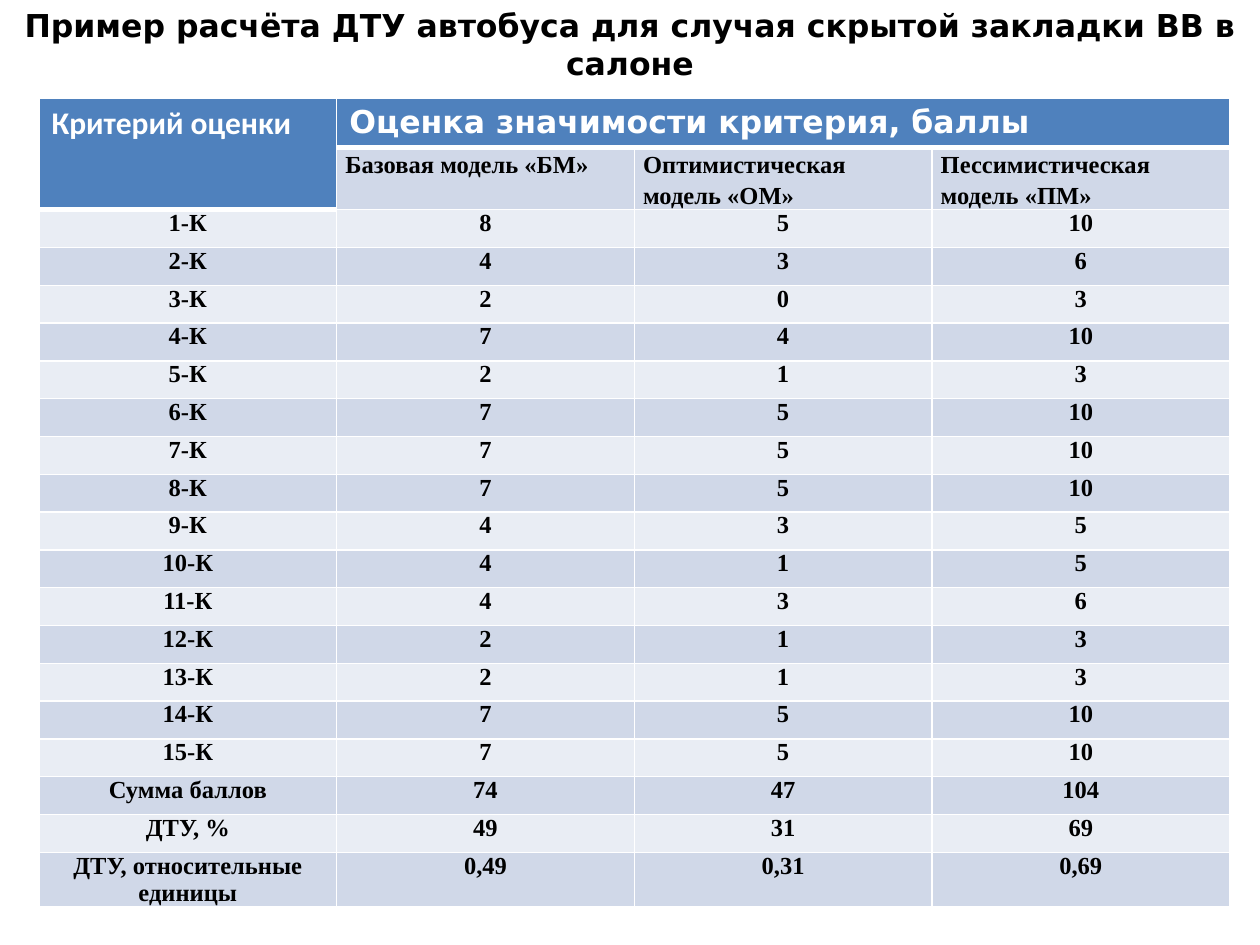
import dataclasses
import typing

import lxml.etree
import pptx
import pptx.dml.color
import pptx.enum.text
import pptx.oxml.ns
import pptx.util

RGB = pptx.dml.color.RGBColor
ALIGN = pptx.enum.text.PP_ALIGN
WHITE = RGB(0xFF, 0xFF, 0xFF)
BLACK = RGB(0x00, 0x00, 0x00)
BLUE = RGB(0x4F, 0x81, 0xBD)
DARK = RGB(0xD0, 0xD8, 0xE8)
LIGHT = RGB(0xE9, 0xED, 0xF4)

WIDE = pptx.util.Inches(10)
HIGH = pptx.util.Inches(7.5)

TITLE = "Пример расчёта ДТУ автобуса для случая скрытой закладки ВВ в салоне"
HEADS = ("Критерий оценки", "Оценка значимости критерия, баллы")
MODELS = ("Базовая модель «БМ»", "Оптимистическая модель «ОМ»", "Пессимистическая модель «ПМ»")
SCORES = (
    (8, 5, 10), (4, 3, 6), (2, 0, 3), (7, 4, 10), (2, 1, 3),
    (7, 5, 10), (7, 5, 10), (7, 5, 10), (4, 3, 5), (4, 1, 5),
    (4, 3, 6), (2, 1, 3), (2, 1, 3), (7, 5, 10), (7, 5, 10),
)
TOTALS = (
    ("Сумма баллов", 74, 47, 104),
    ("ДТУ, %", 49, 31, 69),
    ("ДТУ, относительные единицы", "0,49", "0,31", "0,69"),
)


@dataclasses.dataclass(frozen=True)
class Style:
    """Look of the text and frame of a cell."""

    face: str
    size: int
    color: RGB
    align: typing.Optional[ALIGN] = None
    space: typing.Optional[float] = None
    tight: bool = False
    base: int = 1


TOP = Style("DejaVu Sans", 18, WHITE, base=3)
SIDE = dataclasses.replace(TOP, face="Calibri")
BODY = Style("Times New Roman", 14, BLACK, ALIGN.CENTER, tight=True)
MODEL = dataclasses.replace(BODY, align=ALIGN.JUSTIFY, space=1.15)
HEADING = Style("DejaVu Sans", 18, BLACK, ALIGN.CENTER)


def across(share: float) -> int:
    """Turn a percentage of the slide width into a length."""
    return round(WIDE * share / 100)


def down(share: float) -> int:
    """Turn a percentage of the slide height into a length."""
    return round(HIGH * share / 100)


def write(frame: typing.Any, text: str, style: Style) -> None:
    """Put one bold paragraph into a text frame."""
    frame.text = text
    para = frame.paragraphs[0]
    para.alignment = style.align
    para.line_spacing = style.space
    font = para.font
    font.name, font.size, font.bold = style.face, pptx.util.Pt(style.size), True
    font.color.rgb = style.color


def edge(cell: typing.Any, base: int) -> None:
    """Draw white borders with a bottom line of the given width."""
    props = cell._tc.get_or_add_tcPr()
    qn = pptx.oxml.ns.qn
    for tag, width in (("lnL", 1), ("lnR", 1), ("lnT", 1), ("lnB", base)):
        line = lxml.etree.SubElement(props, qn(f"a:{tag}"), w=str(pptx.util.Pt(width)))
        fill = lxml.etree.SubElement(line, qn("a:solidFill"))
        lxml.etree.SubElement(fill, qn("a:srgbClr"), val=str(WHITE))


def paint(cell: typing.Any, text: str, fill: RGB, style: Style) -> None:
    """Fill, frame and write one table cell."""
    edge(cell, style.base)
    cell.fill.solid()
    cell.fill.fore_color.rgb = fill
    if style.tight:
        cell.margin_left = cell.margin_right = pptx.util.Inches(0.07)
        cell.margin_top = cell.margin_bottom = 0
    write(cell.text_frame, text, style)


def draw_table(slide: typing.Any) -> None:
    """Draw the table of criteria scores."""
    marks = [(f"{num}-К", *row) for num, row in enumerate(SCORES, 1)]
    rows = [*marks, *TOTALS]
    sizes = [4.67, 6, *[4] * (len(rows) - 1), 5.47]
    cols = len(MODELS) + 1
    table = slide.shapes.add_table(
        len(sizes), cols, across(3.1), down(10.4), across(94.5), down(sum(sizes))
    ).table
    for row, size in zip(table.rows, sizes):
        row.height = down(size)
    for col in range(cols):
        paint(table.cell(0, col), "", BLUE, TOP)
    paint(table.cell(1, 0), "", BLUE, SIDE)
    table.cell(0, 0).merge(table.cell(1, 0))
    table.cell(0, 1).merge(table.cell(0, cols - 1))
    for col, (text, style) in enumerate(zip(HEADS, (SIDE, TOP))):
        write(table.cell(0, col).text_frame, text, style)
    for col, text in enumerate(MODELS, 1):
        paint(table.cell(1, col), text, DARK, MODEL)
    for num, row in enumerate(rows, 2):
        for col, value in enumerate(row):
            paint(table.cell(num, col), str(value), DARK if num % 2 else LIGHT, BODY)


def draw_title(slide: typing.Any) -> None:
    """Draw the title across the top of the slide."""
    frame = slide.shapes.add_textbox(0, 0, WIDE, down(9.47)).text_frame
    frame.word_wrap = True
    frame.auto_size = pptx.enum.text.MSO_AUTO_SIZE.SHAPE_TO_FIT_TEXT
    write(frame, TITLE, HEADING)


def main() -> None:
    """Build and save the slide."""
    deck = pptx.Presentation()
    deck.slide_width, deck.slide_height = WIDE, HIGH
    slide = deck.slides.add_slide(deck.slide_layouts[6])
    draw_table(slide)
    draw_title(slide)
    deck.save("out.pptx")


if __name__ == "__main__":
    main()
